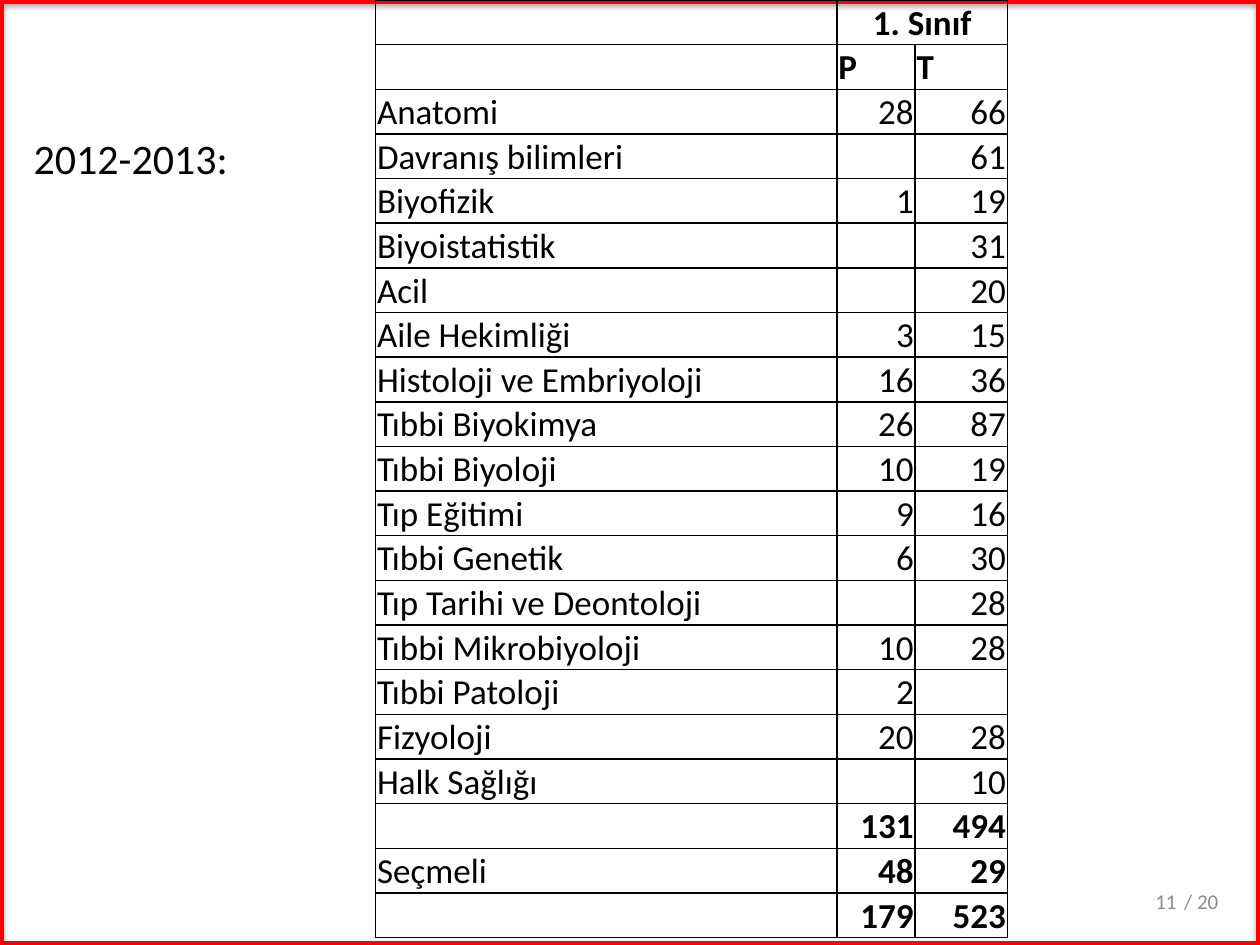
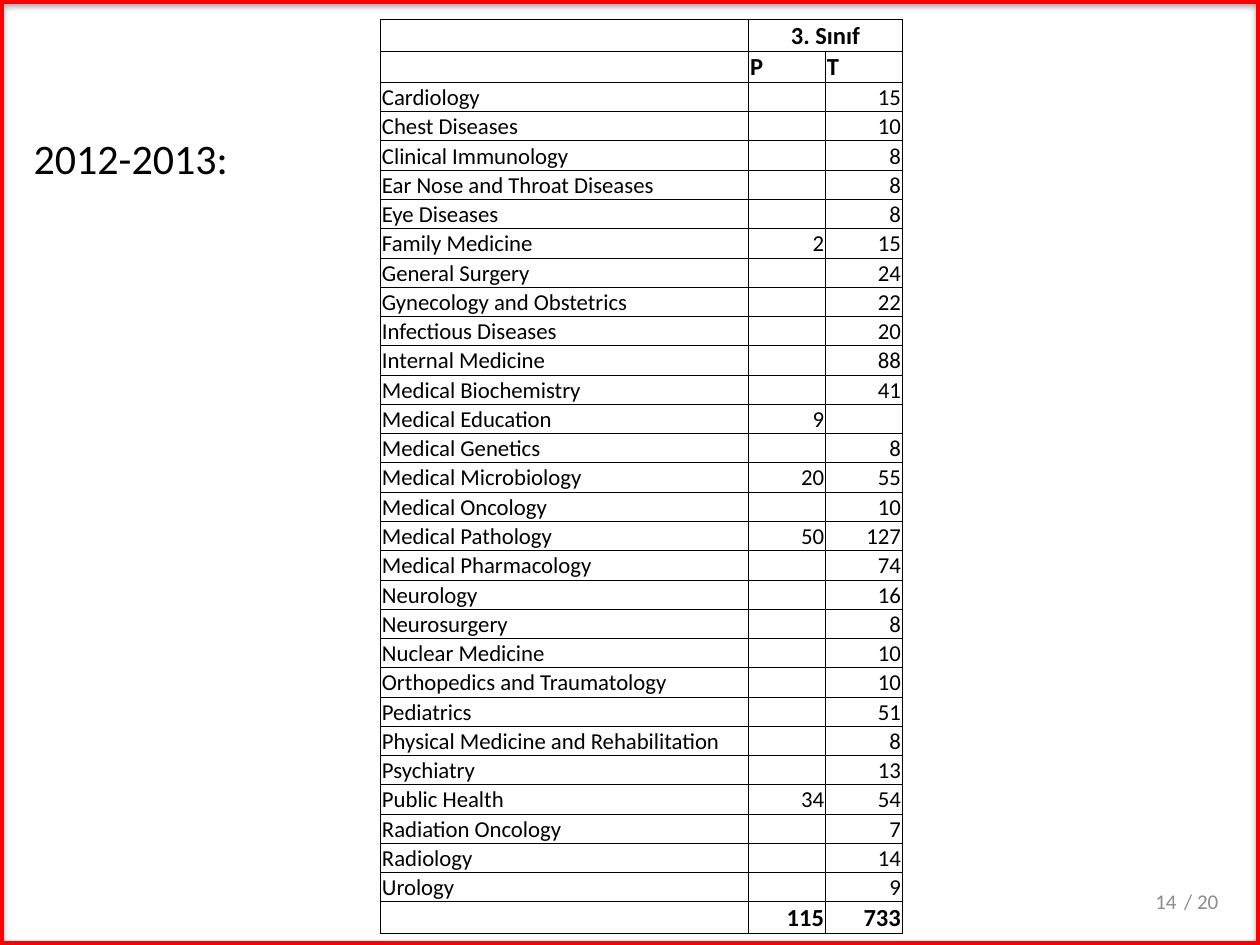
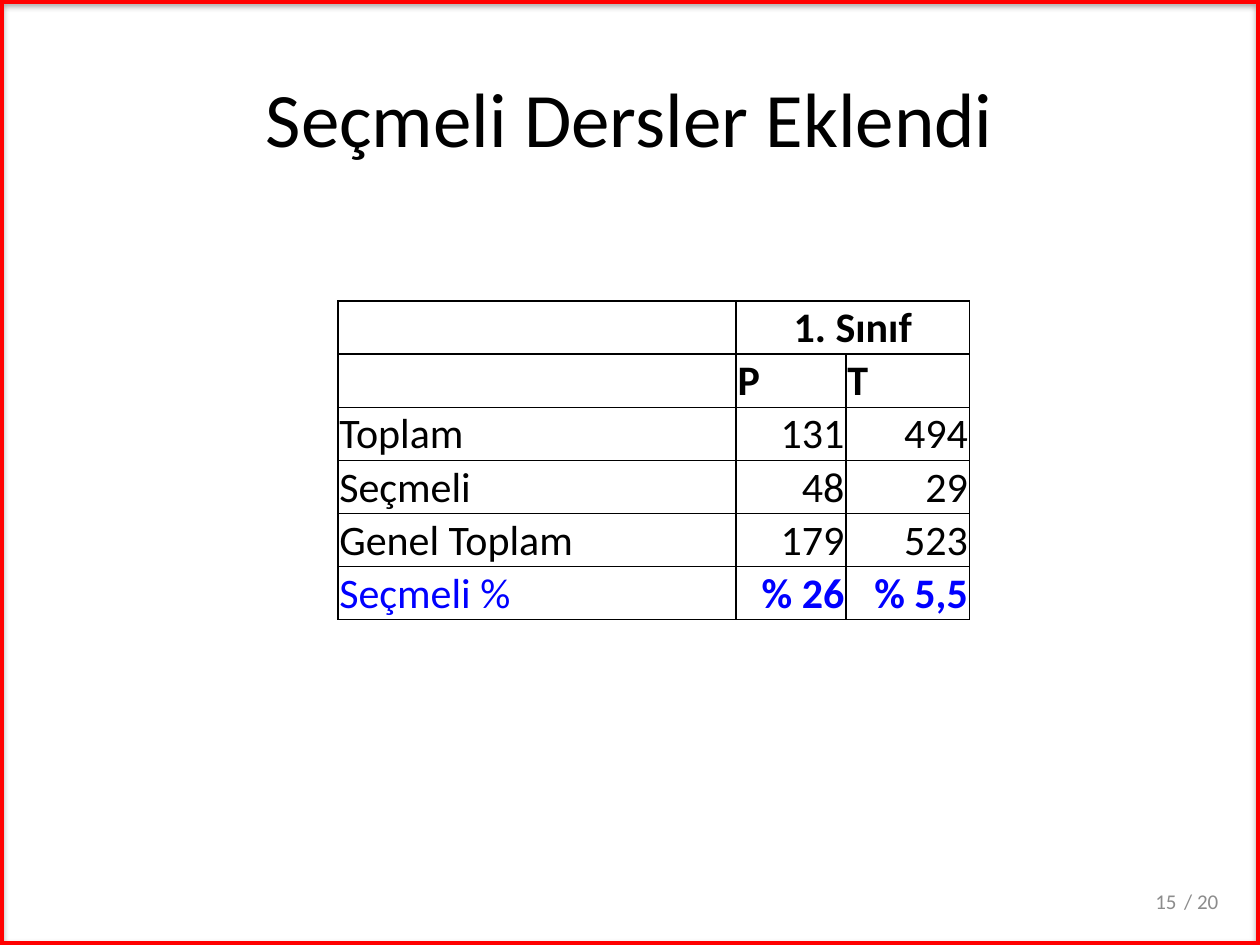
import pptx
import pptx.util
import pptx.dml.color
import pptx.enum.shapes
import pptx.enum.text
import pptx.oxml.ns
import lxml.etree

Cm = pptx.util.Cm
Pt = pptx.util.Pt
ALIGN = pptx.enum.text.PP_ALIGN
ANCHOR = pptx.enum.text.MSO_ANCHOR

COLOURS = {
    "frame": "FF0000",
    "shadow": "000000",
    "ink": "000000",
    "page": "8C8C8C",
    "highlight": "0000FF",
}

FIRST_YEAR = [
    ("Anatomi", "28", "66"),
    ("Davranış bilimleri", "", "61"),
    ("Biyofizik", "1", "19"),
    ("Biyoistatistik", "", "31"),
    ("Acil", "", "20"),
    ("Aile Hekimliği", "3", "15"),
    ("Histoloji ve Embriyoloji", "16", "36"),
    ("Tıbbi Biyokimya", "26", "87"),
    ("Tıbbi Biyoloji", "10", "19"),
    ("Tıp Eğitimi", "9", "16"),
    ("Tıbbi Genetik", "6", "30"),
    ("Tıp Tarihi ve Deontoloji", "", "28"),
    ("Tıbbi Mikrobiyoloji", "10", "28"),
    ("Tıbbi Patoloji", "2", ""),
    ("Fizyoloji", "20", "28"),
    ("Halk Sağlığı", "", "10"),
    ("", "131", "494"),
    ("Seçmeli", "48", "29"),
    ("", "179", "523"),
]

THIRD_YEAR = [
    ("Cardiology", "", "15"),
    ("Chest Diseases", "", "10"),
    ("Clinical Immunology", "", "8"),
    ("Ear Nose and Throat Diseases", "", "8"),
    ("Eye Diseases", "", "8"),
    ("Family Medicine", "2", "15"),
    ("General Surgery", "", "24"),
    ("Gynecology and Obstetrics", "", "22"),
    ("Infectious Diseases", "", "20"),
    ("Internal Medicine", "", "88"),
    ("Medical Biochemistry", "", "41"),
    ("Medical Education", "9", ""),
    ("Medical Genetics", "", "8"),
    ("Medical Microbiology", "20", "55"),
    ("Medical Oncology", "", "10"),
    ("Medical Pathology", "50", "127"),
    ("Medical Pharmacology", "", "74"),
    ("Neurology", "", "16"),
    ("Neurosurgery", "", "8"),
    ("Nuclear Medicine", "", "10"),
    ("Orthopedics and Traumatology", "", "10"),
    ("Pediatrics", "", "51"),
    ("Physical Medicine and Rehabilitation", "", "8"),
    ("Psychiatry", "", "13"),
    ("Public Health", "34", "54"),
    ("Radiation Oncology", "", "7"),
    ("Radiology", "", "14"),
    ("Urology", "", "9"),
    ("", "115", "733"),
]

ELECTIVES = [
    ("Toplam", "131", "494"),
    ("Seçmeli", "48", "29"),
    ("Genel Toplam", "179", "523"),
    ("Seçmeli %", "% 26", "% 5,5"),
]


def rgb(colour):
    return pptx.dml.color.RGBColor.from_string(COLOURS[colour])


def add_element(parent, tag, **attributes):
    element = lxml.etree.SubElement(parent, pptx.oxml.ns.qn(tag))
    for key, value in attributes.items():
        element.set(key, str(value))
    return element


class Deck:
    font = "Calibri"
    page_total = 20

    def __init__(self):
        self.presentation = pptx.Presentation()
        self.presentation.slide_width = Cm(25.4)
        self.presentation.slide_height = Cm(19.05)
        self.slide = None

    def start_slide(self, page):
        self.slide = self.presentation.slides.add_slide(self.presentation.slide_layouts[6])
        self.frame()
        self.text(f"/ {self.page_total}", 22.45, 17.65, 2.36, 1.02, 12, "page",
                  ALIGN.RIGHT, ANCHOR.MIDDLE)
        self.text(str(page), 23.04, 17.65, 2.36, 1.02, 12, "page", anchor=ANCHOR.MIDDLE)

    def frame(self):
        border = self.slide.shapes.add_shape(
            pptx.enum.shapes.MSO_SHAPE.RECTANGLE, 0, 0,
            self.presentation.slide_width, self.presentation.slide_height)
        border.fill.background()
        border.line.color.rgb = rgb("frame")
        border.line.width = Pt(4.5)
        border.shadow.inherit = False
        effects = border._element.spPr.find(pptx.oxml.ns.qn("a:effectLst"))
        shadow = add_element(effects, "a:outerShdw", blurRad=Pt(3.1), dist=Pt(1.8),
                             dir=5400000, rotWithShape=0)
        tint = add_element(shadow, "a:srgbClr", val=COLOURS["shadow"])
        add_element(tint, "a:alpha", val=35000)

    def set_words(self, paragraph, words, size, colour="ink", bold=False, align=ALIGN.LEFT):
        paragraph.text = words
        paragraph.alignment = align
        for run in paragraph.runs:
            run.font.name = self.font
            run.font.size = Pt(size)
            run.font.bold = bold
            run.font.color.rgb = rgb(colour)
        if not words:
            add_element(paragraph._p, "a:endParaRPr", sz=size * 100)

    def text(self, words, left, top, width, height, size, colour="ink",
             align=ALIGN.LEFT, anchor=ANCHOR.TOP, wrap=True):
        frame = self.slide.shapes.add_textbox(
            Cm(left), Cm(top), Cm(width), Cm(height)).text_frame
        frame.word_wrap = wrap
        frame.vertical_anchor = anchor
        self.set_words(frame.paragraphs[0], words, size, colour, align=align)

    def title(self, words):
        self.text(words, 1.27, 0.76, 22.86, 3.18, 44, align=ALIGN.CENTER, anchor=ANCHOR.MIDDLE)

    def term(self, words):
        self.text(words, 0.43, 2.54, 4.47, 1.27, 24, wrap=False)

    def style_cell(self, cell, border):
        cell.margin_left = cell.margin_right = cell.margin_top = Cm(0.03)
        cell.margin_bottom = 0
        cell.vertical_anchor = ANCHOR.BOTTOM
        properties = cell._tc.get_or_add_tcPr()
        for side in ("a:lnL", "a:lnR", "a:lnT", "a:lnB"):
            line = add_element(properties, side, w=Pt(border))
            add_element(add_element(line, "a:solidFill"), "a:srgbClr", val=COLOURS["ink"])
        cell.fill.background()

    def hours_table(self, year, subjects, left, top, widths, row_height, size,
                    body_size=None, body_height=None, border=1,
                    bold_rows=("",), highlighted=None):
        rows = [("", year, ""), ("", "P", "T")] + subjects
        hours = self.slide.shapes.add_table(
            len(rows), len(widths), Cm(left), Cm(top),
            Cm(sum(widths)), Cm(row_height * len(rows))).table
        hours.first_row = hours.horz_banding = False
        for column, width in zip(hours.columns, widths):
            column.width = Cm(width)
        for index, values in enumerate(rows):
            header = index < 2
            subject = values[0]
            height = body_height if subject and body_height else row_height
            hours.rows[index].height = Cm(height)
            text_size = body_size if subject and body_size else size
            colour = "highlight" if subject and subject == highlighted else "ink"
            for column, value in enumerate(values):
                cell = hours.cell(index, column)
                self.style_cell(cell, border)
                align = ALIGN.RIGHT if column and not header else ALIGN.LEFT
                bold = column > 0 and (header or subject in bold_rows)
                self.set_words(cell.text_frame.paragraphs[0], value, text_size,
                               colour, bold, align)
        hours.cell(0, 1).merge(hours.cell(0, 2))
        hours.cell(0, 1).text_frame.paragraphs[0].alignment = ALIGN.CENTER


def main():
    deck = Deck()

    deck.start_slide(11)
    deck.hours_table("1. Sınıf", FIRST_YEAR, 7.57, 0, (9.3, 1.58, 1.86), 0.9, 20,
                     bold_rows=("", "Seçmeli"))
    deck.term("2012-2013:")

    deck.start_slide(14)
    deck.hours_table("3. Sınıf", THIRD_YEAR, 7.67, 0.4, (7.42, 1.55, 1.55), 0.63, 14,
                     body_size=13, body_height=0.59, border=0.5)
    deck.term("2012-2013:")

    deck.start_slide(15)
    deck.title("Seçmeli Dersler Eklendi")
    deck.hours_table("1. Sınıf", ELECTIVES, 6.81, 6.07, (8.03, 2.21, 2.49), 1.07, 24,
                     bold_rows=("Seçmeli %",), highlighted="Seçmeli %")

    deck.presentation.save("out.pptx")


if __name__ == "__main__":
    main()
